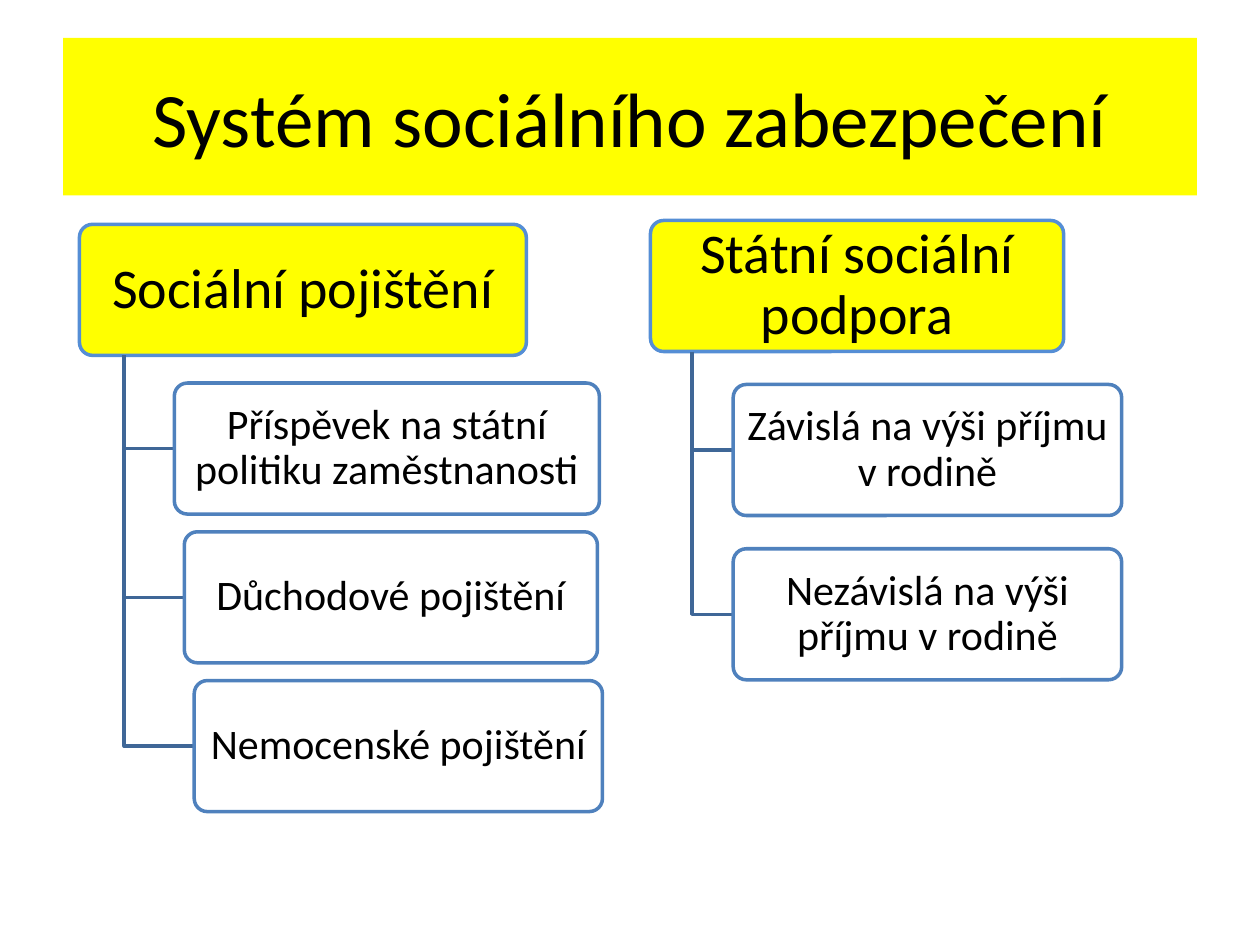
from dataclasses import dataclass

from lxml.etree import SubElement
from pptx import Presentation
from pptx.dml.color import RGBColor
from pptx.enum.shapes import MSO_SHAPE
from pptx.enum.text import MSO_ANCHOR, PP_ALIGN
from pptx.oxml.ns import qn
from pptx.util import Pt

COLORS = {"head": "FFFF00", "rim": "558ED5", "item": "FFFFFF",
          "edge": "4F81BD", "link": "3F6797", "text": "000000"}
FONT = "Calibri"
HIGH = 74.9


@dataclass
class Box:
    text: str
    left: float
    width: float


@dataclass
class Tree:
    head: Box
    top: float
    first: float  # top of the first item
    step: float
    items: list[Box]


TREES = [
    Tree(Box("Sociální pojištění", 45.4, 255.4), 128.2, 218.9, 85, [
        Box("Příspěvek na státní politiku zaměstnanosti", 99.6, 242.9),
        Box("Důchodové pojištění", 105.3, 236.1),
        Box("Nemocenské pojištění", 111, 233.3)]),
    Tree(Box("Státní sociální podpora", 371.7, 236.1), 126, 219.7, 93.9, [
        Box("Závislá na výši příjmu v rodině", 419, 222),
        Box("Nezávislá na výši příjmu v rodině", 419, 222)]),
]


def tint(name: str) -> RGBColor:
    return RGBColor.from_string(COLORS[name])


def style(para, size: float) -> None:
    para.alignment = PP_ALIGN.CENTER
    para.font.name = FONT
    para.font.size = Pt(size)
    para.font.color.rgb = tint("text")


def outline(shape, color: str) -> None:
    shape.shadow.inherit = False
    shape.line.color.rgb = tint(color)
    shape.line.width = Pt(2)


def draw_box(slide, box: Box, top: float, is_head: bool) -> None:
    shape = slide.shapes.add_shape(MSO_SHAPE.ROUNDED_RECTANGLE, Pt(box.left),
                                   Pt(top), Pt(box.width), Pt(HIGH))
    shape.adjustments[0] = 0.1
    outline(shape, "rim" if is_head else "edge")
    shape.fill.solid()
    shape.fill.fore_color.rgb = tint("head" if is_head else "item")
    if not is_head:
        color = shape.fill._xPr.find(".//" + qn("a:srgbClr"))
        SubElement(color, qn("a:alpha"), val="90000")
    frame = shape.text_frame
    frame.word_wrap = True
    frame.vertical_anchor = MSO_ANCHOR.MIDDLE
    side, edge = (4.8, 3.2) if is_head else (3.6, 2.4)
    frame.margin_left = frame.margin_right = Pt(side)
    frame.margin_top = frame.margin_bottom = Pt(edge)
    frame.text = box.text
    para = frame.paragraphs[0]
    para.line_spacing = 0.9
    style(para, 32 if is_head else 24)


def draw_link(slide, left: float, top: float, right: float, low: float) -> None:
    """Draw an elbow down from a head and across to an item."""
    path = slide.shapes.build_freeform(Pt(left), Pt(top))
    path.add_line_segments([(Pt(left), Pt(low)), (Pt(right), Pt(low))],
                           close=False)
    link = path.convert_to_shape()
    link.fill.background()
    outline(link, "link")


def draw_tree(slide, tree: Tree) -> None:
    head = tree.head
    draw_box(slide, head, tree.top, True)
    stem = head.left + head.width / 10
    for row, item in enumerate(tree.items):
        top = tree.first + row * tree.step
        draw_link(slide, stem, tree.top + HIGH, item.left, top + HIGH / 2)
        draw_box(slide, item, top, False)


def draw_title(slide, text: str) -> None:
    title = slide.shapes.title
    title.left, title.top = Pt(36), Pt(21.6)
    title.width, title.height = Pt(648), Pt(90)
    title.fill.solid()
    title.fill.fore_color.rgb = tint("head")
    title.text_frame.text = text
    title.text_frame.vertical_anchor = MSO_ANCHOR.MIDDLE
    style(title.text_frame.paragraphs[0], 44)


def main() -> None:
    deck = Presentation()
    deck.slide_width, deck.slide_height = Pt(720), Pt(540)
    slide = deck.slides.add_slide(deck.slide_layouts[5])
    draw_title(slide, "Systém sociálního zabezpečení")
    for tree in TREES:
        draw_tree(slide, tree)
    deck.save("out.pptx")


if __name__ == "__main__":
    main()
